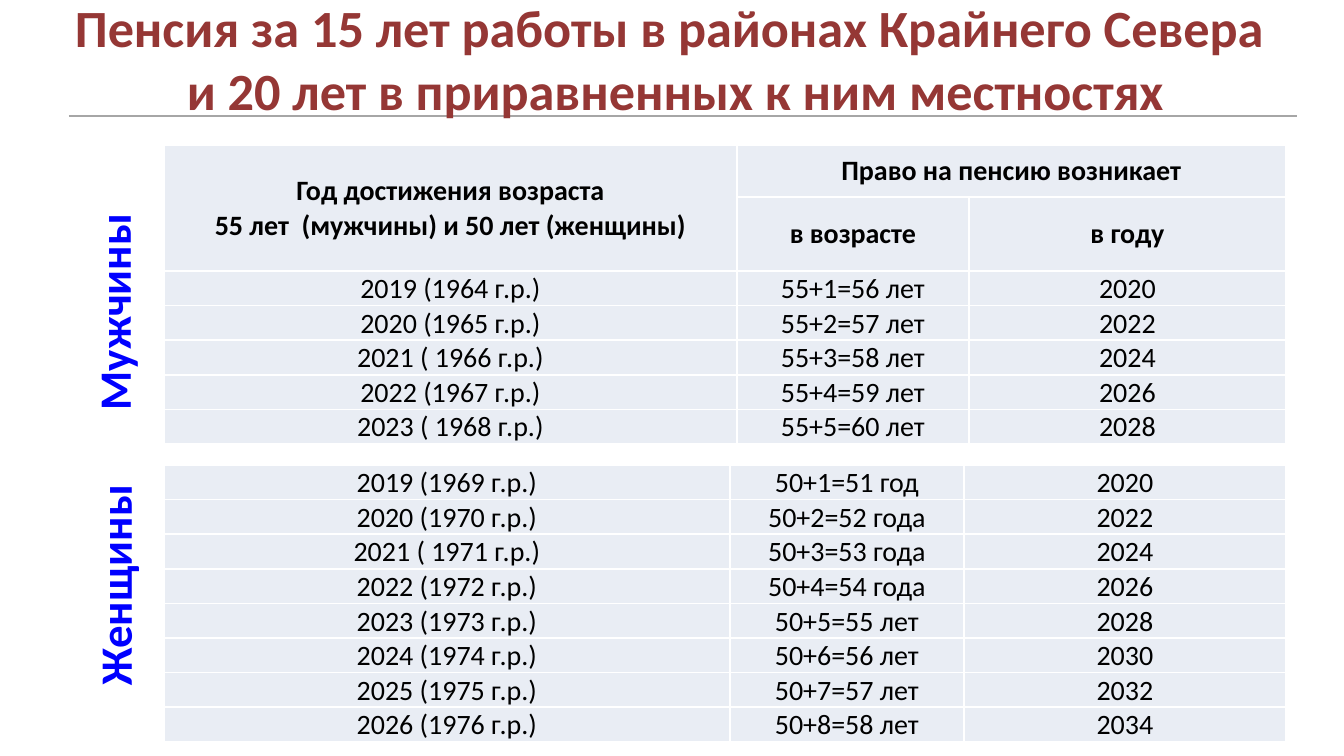
from dataclasses import dataclass

from lxml import etree
from pptx import Presentation
from pptx.dml.color import RGBColor
from pptx.enum.shapes import MSO_CONNECTOR
from pptx.enum.text import MSO_ANCHOR, PP_ALIGN
from pptx.oxml.ns import qn
from pptx.util import Emu, Pt

STRAIGHT = MSO_CONNECTOR.STRAIGHT
MIDDLE = MSO_ANCHOR.MIDDLE
CENTER, LEFT = PP_ALIGN.CENTER, PP_ALIGN.LEFT


@dataclass(frozen=True)
class Theme:
    font: str = "Calibri"
    title: str = "953735"
    label: str = "0000FF"
    text: str = "000000"
    cell: str = "E9EDF4"
    border: str = "FFFFFF"
    rule: str = "A6A6A6"
    title_size: float = 28
    label_size: float = 24
    table_size: float = 15
    border_width: float = 1
    rule_width: float = 1.5


THEME = Theme()

# Content; "\v" is a line break inside a paragraph
TITLE = "Пенсия за 15 лет работы в районах Крайнего Севера \vи 20 лет в приравненных к ним местностях"
HEADER = [
    ("Год достижения возраста\v55 лет  (мужчины) и 50 лет (женщины)", "Право на пенсию возникает", ""),
    ("", "в возрасте", "в году"),
]
MEN = [
    ("2019 (1964 г.р.)", "55+1=56 лет", "2020"),
    ("2020 (1965 г.р.)", "55+2=57 лет", "2022"),
    ("2021 ( 1966 г.р.)", "55+3=58 лет", "2024"),
    ("2022 (1967 г.р.)", "55+4=59 лет", "2026"),
    ("2023 ( 1968 г.р.)", "55+5=60 лет", "2028"),
]
WOMEN = [
    ("2019 (1969 г.р.)", "50+1=51 год", "2020"),
    ("2020 (1970 г.р.)", "50+2=52 года", "2022"),
    ("2021 ( 1971 г.р.)", "50+3=53 года", "2024"),
    ("2022 (1972 г.р.)", "50+4=54 года", "2026"),
    ("2023 (1973 г.р.)", "50+5=55 лет", "2028"),
    ("2024 (1974 г.р.)", "50+6=56 лет", "2030"),
    ("2025 (1975 г.р.)", "50+7=57 лет", "2032"),
    ("2026 (1976 г.р.)", "50+8=58 лет", "2034"),
]
LABELS = [("Мужчины", (0, 277, 226, 67)), ("Женщины", (-1, 550, 230, 67))]

# Layout in px
SLIDE_SIZE = (1344, 756)
TITLE_BOX = (3, -11, 1344, 140)
RULE = (69, 116, 1297, 116)
TABLE_LEFT = 164
HEADER_HEIGHTS = [52, 74]
ROW_HEIGHT = 34
TABLES = [
    # rows, header row count, top, column widths
    (HEADER + MEN, len(HEADER), 145, (573, 232, 317)),
    (WOMEN, 0, 465, (566, 234, 322)),
]


def px(length):
    return Emu(round(length * 914400 / 134.4))


def format_text(text_frame, size, color, bold, alignment):
    for paragraph in text_frame.paragraphs:
        paragraph.alignment = alignment
        for run in paragraph.runs:
            run.font.name = THEME.font
            run.font.size = Pt(size)
            run.font.bold = bold
            run.font.color.rgb = RGBColor.from_string(color)


def add_text(slide, text, box, size, color, alignment, wrap=True, rotation=0):
    shape = slide.shapes.add_textbox(*map(px, box))
    shape.rotation = rotation
    shape.text_frame.word_wrap = wrap
    shape.text_frame.text = text
    format_text(shape.text_frame, size, color, True, alignment)


def add_rule(slide):
    rule = slide.shapes.add_connector(STRAIGHT, *map(px, RULE))
    rule.line.color.rgb = RGBColor.from_string(THEME.rule)
    rule.line.width = Pt(THEME.rule_width)
    etree.SubElement(rule._element.spPr, qn("a:effectLst"))


def add_borders(cell):
    properties = cell._tc.get_or_add_tcPr()
    for side in ("lnL", "lnR", "lnT", "lnB"):
        line = etree.SubElement(properties, qn(f"a:{side}"), w=str(Pt(THEME.border_width)))
        fill = etree.SubElement(line, qn("a:solidFill"))
        etree.SubElement(fill, qn("a:srgbClr"), val=THEME.border)


def style_cell(cell, text, bold):
    cell.text = text
    cell.vertical_anchor = MIDDLE
    cell.margin_left = cell.margin_right = cell.margin_top = px(1)
    cell.margin_bottom = 0
    add_borders(cell)
    cell.fill.solid()
    cell.fill.fore_color.rgb = RGBColor.from_string(THEME.cell)
    format_text(cell.text_frame, THEME.table_size, THEME.text, bold, CENTER)


def add_pension_table(slide, rows, header_count, top, widths):
    heights = HEADER_HEIGHTS[:header_count] + [ROW_HEIGHT] * (len(rows) - header_count)
    frame = slide.shapes.add_table(
        len(rows), len(widths), px(TABLE_LEFT), px(top), px(sum(widths)), px(sum(heights))
    )
    table = frame.table
    table.first_row = table.horz_banding = False
    for column, width in zip(table.columns, widths):
        column.width = px(width)
    for row_index, (row, height) in enumerate(zip(rows, heights)):
        table.rows[row_index].height = px(height)
        for column_index, text in enumerate(row):
            style_cell(table.cell(row_index, column_index), text, row_index < header_count)
    if header_count:
        table.cell(0, 0).merge(table.cell(1, 0))
        table.cell(0, 1).merge(table.cell(0, 2))


def main():
    presentation = Presentation()
    presentation.slide_width, presentation.slide_height = map(px, SLIDE_SIZE)
    slide = presentation.slides.add_slide(presentation.slide_layouts[6])

    # Title and rule
    add_rule(slide)
    add_text(slide, TITLE, TITLE_BOX, THEME.title_size, THEME.title, CENTER)

    # Vertical labels
    for text, box in LABELS:
        add_text(slide, text, box, THEME.label_size, THEME.label, LEFT, wrap=False, rotation=270)

    # Tables for men and women
    for table in TABLES:
        add_pension_table(slide, *table)

    presentation.save("out.pptx")


if __name__ == "__main__":
    main()
